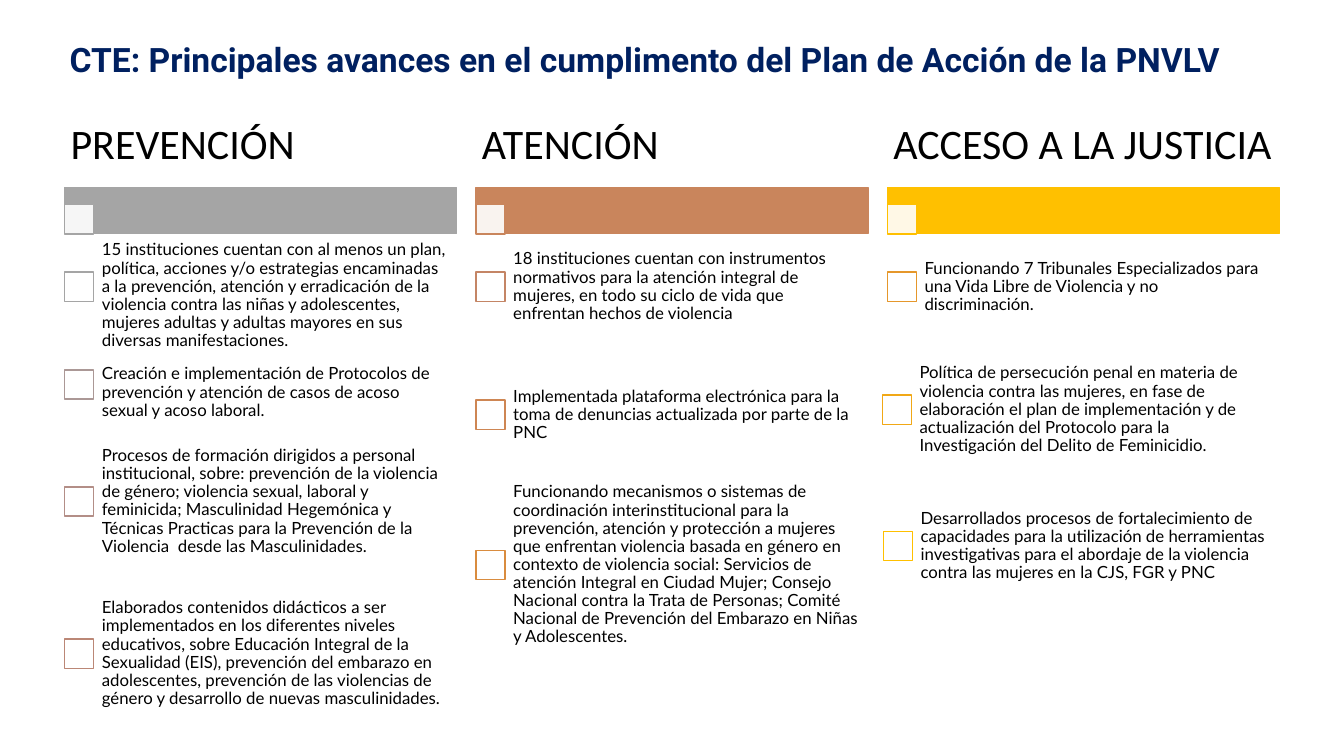
from dataclasses import dataclass

import lxml.etree
import pptx
import pptx.dml.color
import pptx.enum.shapes
import pptx.enum.text
import pptx.oxml.ns
import pptx.util

Inches = pptx.util.Inches

COLORS = {
    "title": "002060",
    "text": "000000",
    "white": "FFFFFF",
    "prevention": "A5A5A5",
    "protocols": "AB9896",
    "training": "B38E87",
    "education": "BB8776",
    "care": "C9855C",
    "regulations": "C48565",
    "platform": "CE8653",
    "coordination": "D98C3F",
    "justice": "FFC000",
    "courts": "E5972B",
    "prosecution": "F1A816",
}
COLUMN_LEFT = 0.64
COLUMN_STEP = 4.08
COLUMN_WIDTH = 3.89
BOX_SIZE = 0.29
TEXT_OFFSET = 0.28


@dataclass
class Advance:
    text: str
    color: str
    box_top: float
    text_rise: float = 0.19
    shift: float = 0


@dataclass
class Column:
    heading: str
    color: str
    advances: list[Advance]


COLUMNS = [
    Column("PREVENCIÓN", "prevention", [
        Advance(
            "15 instituciones cuentan con al menos un plan, política, acciones y/o estrategias "
            "encaminadas a la prevención, atención y erradicación de la violencia contra las niñas "
            "y adolescentes, mujeres adultas y adultas mayores en sus diversas manifestaciones.",
            "prevention", 2.7, 0.1),
        Advance(
            "Creación e implementación de Protocolos de prevención y atención de casos de acoso "
            "sexual y acoso laboral.",
            "protocols", 3.67, 0.11),
        Advance(
            "Procesos de formación dirigidos a personal institucional, sobre: prevención de la "
            "violencia de género; violencia sexual, laboral y feminicida; Masculinidad Hegemónica "
            "y Técnicas Practicas para la Prevención de la Violencia  desde las Masculinidades.",
            "training", 4.83),
        Advance(
            "Elaborados contenidos didácticos a ser implementados en los diferentes niveles "
            "educativos, sobre Educación Integral de la Sexualidad (EIS), prevención del embarazo "
            "en adolescentes, prevención de las violencias de género y desarrollo de nuevas "
            "masculinidades.",
            "education", 6.34),
    ]),
    Column("ATENCIÓN", "care", [
        Advance(
            "18 instituciones cuentan con instrumentos normativos para la atención integral de "
            "mujeres, en todo su ciclo de vida que enfrentan hechos de violencia",
            "regulations", 2.7),
        Advance(
            "Implementada plataforma electrónica para la toma de denuncias actualizada por parte "
            "de la PNC",
            "platform", 3.97),
        Advance(
            "Funcionando mecanismos o sistemas de coordinación interinstitucional para la "
            "prevención, atención y protección a mujeres que enfrentan violencia basada en género "
            "en contexto de violencia social: Servicios de atención Integral en Ciudad Mujer; "
            "Consejo Nacional contra la Trata de Personas; Comité Nacional de Prevención del "
            "Embarazo en Niñas y Adolescentes.",
            "coordination", 5.46),
    ]),
    Column("ACCESO A LA JUSTICIA", "justice", [
        Advance(
            "Funcionando 7 Tribunales Especializados para una Vida Libre de Violencia y no "
            "discriminación.",
            "courts", 2.7),
        Advance(
            "Política de persecución penal en materia de violencia contra las mujeres, en fase de "
            "elaboración el plan de implementación y de actualización del Protocolo para la "
            "Investigación del Delito de Feminicidio.",
            "prosecution", 3.92, shift=-0.05),
        Advance(
            "Desarrollados procesos de fortalecimiento de capacidades para la utilización de "
            "herramientas investigativas para el abordaje de la violencia contra las mujeres en "
            "la CJS, FGR y PNC",
            "justice", 5.27, shift=-0.04),
    ]),
]


def rgb(name: str) -> pptx.dml.color.RGBColor:
    return pptx.dml.color.RGBColor.from_string(COLORS[name])


def add_rectangle(slide, left: float, top: float, width: float, height: float,
                  fill: str, line: str, opacity: int = 100) -> None:
    shape = slide.shapes.add_shape(
        pptx.enum.shapes.MSO_SHAPE.RECTANGLE,
        Inches(left), Inches(top), Inches(width), Inches(height))
    shape.shadow.inherit = False
    shape.fill.solid()
    shape.fill.fore_color.rgb = rgb(fill)
    shape.line.color.rgb = rgb(line)
    shape.line.width = pptx.util.Pt(1)
    if opacity < 100:
        color = shape.fill._xPr.find(".//" + pptx.oxml.ns.qn("a:srgbClr"))
        alpha = lxml.etree.SubElement(color, pptx.oxml.ns.qn("a:alpha"))
        alpha.set("val", str(opacity * 1000))


def add_text(slide, text: str, left: float, top: float, width: float, height: float,
             font: str, size: int, margins: tuple[float, float], color: str = "text",
             bold: bool = False, spacing: float = 0.9, middle: bool = True) -> None:
    shape = slide.shapes.add_textbox(Inches(left), Inches(top), Inches(width), Inches(height))
    frame = shape.text_frame
    frame.word_wrap = True
    frame.margin_left = frame.margin_right = Inches(margins[0])
    frame.margin_top = frame.margin_bottom = Inches(margins[1])
    anchors = pptx.enum.text.MSO_ANCHOR
    frame.vertical_anchor = anchors.MIDDLE if middle else anchors.TOP
    paragraph = frame.paragraphs[0]
    paragraph.line_spacing = spacing
    run = paragraph.add_run()
    run.text = text
    run.font.name = font
    run.font.size = pptx.util.Pt(size)
    run.font.bold = bold
    run.font.color.rgb = rgb(color)


def add_column(slide, column: Column, left: float) -> None:
    add_rectangle(slide, left, 1.86, COLUMN_WIDTH, 0.46, column.color, column.color)
    add_rectangle(slide, left, 2.03, BOX_SIZE, BOX_SIZE, "white", column.color, 90)
    add_text(slide, column.heading, left, 1.04, COLUMN_WIDTH, 0.82, "Calibri", 30, (0.06, 0.04))
    for advance in column.advances:
        box_left = left + advance.shift
        add_rectangle(slide, box_left, advance.box_top, BOX_SIZE, BOX_SIZE, "white", advance.color)
        add_text(slide, advance.text, box_left + TEXT_OFFSET, advance.box_top - advance.text_rise,
                 COLUMN_WIDTH - TEXT_OFFSET, 0.67, "Lato", 12, (0.09, 0.09))


def main() -> None:
    presentation = pptx.Presentation()
    presentation.slide_width = Inches(13.33)
    presentation.slide_height = Inches(7.5)
    slide = presentation.slides.add_slide(presentation.slide_layouts[6])
    add_text(slide, "CTE: Principales avances en el cumplimento del Plan de Acción de la PNVLV",
             0.64, 0.34, 12.48, 0.5, "Roboto", 24, (0.05, 0.05), "title",
             bold=True, spacing=1.0, middle=False)
    for index, column in enumerate(COLUMNS):
        add_column(slide, column, COLUMN_LEFT + index * COLUMN_STEP)
    presentation.save("out.pptx")


if __name__ == "__main__":
    main()
